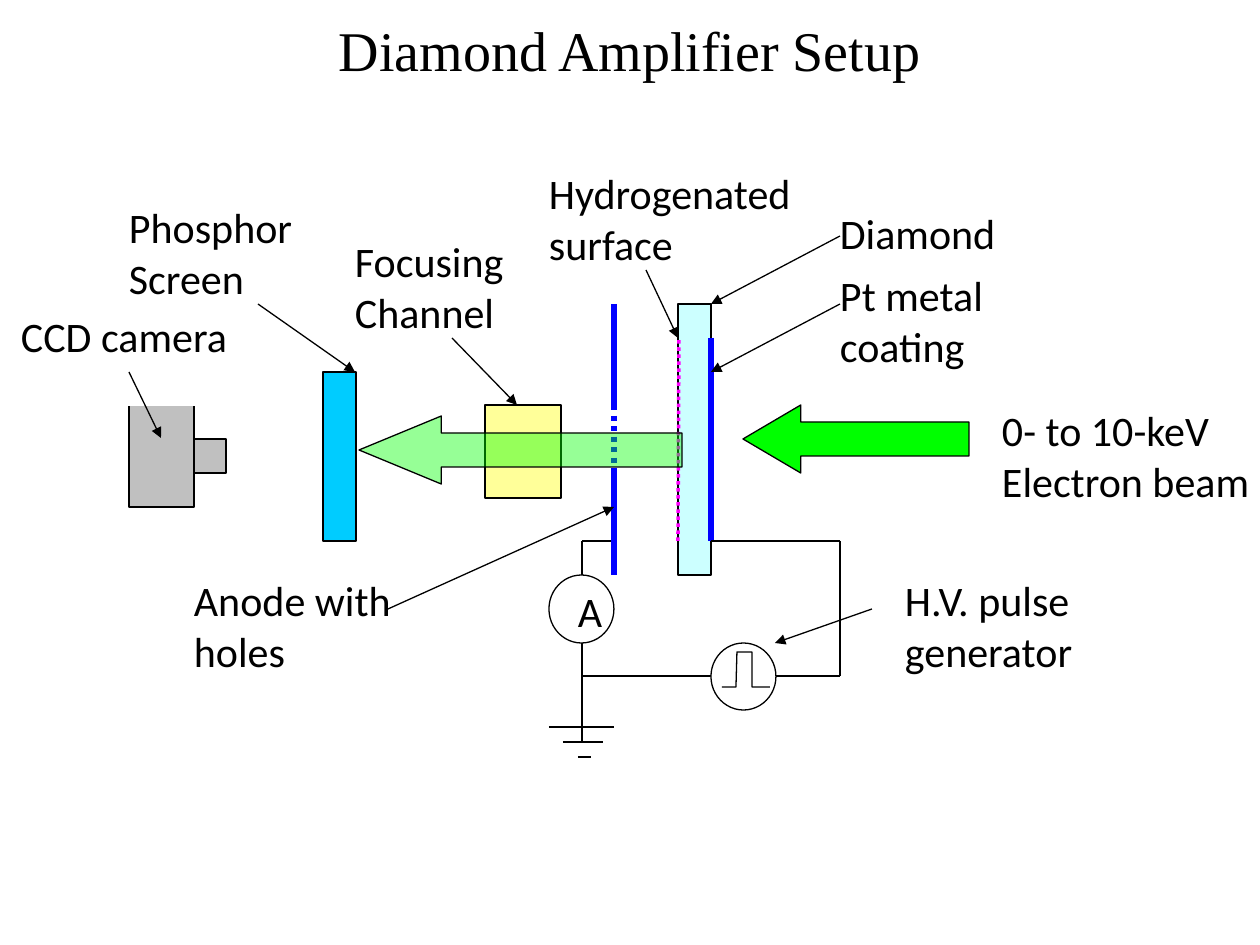
import pptx
import pptx.util
import pptx.dml.color
import pptx.enum.dml
import pptx.enum.shapes
import pptx.enum.text
import pptx.oxml
import pptx.oxml.ns
from dataclasses import dataclass

PX = 914400 / 126
SHAPE = pptx.enum.shapes.MSO_SHAPE
DOTS = pptx.enum.dml.MSO_LINE.ROUND_DOT  # sysDot


@dataclass(frozen=True)
class Theme:
    ink: str = "000000"
    paper: str = "FFFFFF"
    diamond: str = "CCFFFF"
    metal: str = "0000FF"
    hydrogen: str = "FF00FF"
    beam: str = "00FF00"
    lens: str = "FFFF99"
    phosphor: str = "00CCFF"
    camera: str = "C0C0C0"
    title_font: str = "Times New Roman"
    label_font: str = "Calibri"
    title_size: int = 32
    label_size: int = 24
    thin: float = 0.75
    dotted: int = 2
    thick: int = 3


T = Theme()


def px(*values):
    return [pptx.util.Emu(round(v * PX)) for v in values]


def rgb(color):
    return pptx.dml.color.RGBColor.from_string(color)


def append_xml(parent, tag, attrs=""):
    ns = pptx.oxml.ns.nsdecls("a")
    parent.append(pptx.oxml.parse_xml(f"<a:{tag} {ns} {attrs}/>"))


def write(shape, text, font=T.label_font, size=T.label_size, insets=(0, 0, 0, 0),
          align="LEFT", anchor="TOP"):
    tf = shape.text_frame
    tf.word_wrap = True
    tf.margin_left, tf.margin_top, tf.margin_right, tf.margin_bottom = px(*insets)
    tf.vertical_anchor = getattr(pptx.enum.text.MSO_ANCHOR, anchor)
    p = tf.paragraphs[0]
    p.alignment = getattr(pptx.enum.text.PP_ALIGN, align)
    r = p.add_run()
    r.text = text
    r.font.name, r.font.size = font, pptx.util.Pt(size)
    r.font.color.rgb = rgb(T.ink)


def add_part(s, kind, box, fill, outline=True, adjust=(), alpha=None):
    sp = s.shapes.add_shape(kind, *px(*box))
    sp.shadow.inherit = False
    sp.fill.solid()
    sp.fill.fore_color.rgb = rgb(fill)
    if alpha:
        color = sp._element.spPr.find(".//" + pptx.oxml.ns.qn("a:srgbClr"))
        append_xml(color, "alpha", f'val="{alpha * 1000}"')
    if outline:
        sp.line.color.rgb = rgb(T.ink)
        sp.line.width = pptx.util.Pt(T.thin)
    else:
        sp.line.fill.background()
    for i, value in enumerate(adjust):
        sp.adjustments[i] = value
    return sp


def add_line(s, start, end, color=T.ink, width=T.thin, dash=None, arrow=False):
    kind = pptx.enum.shapes.MSO_CONNECTOR.STRAIGHT
    line = s.shapes.add_connector(kind, *px(*start, *end))
    line.line.color.rgb = rgb(color)
    line.line.width = pptx.util.Pt(width)
    if dash:
        line.line.dash_style = dash
    if arrow:
        append_xml(line.line._get_or_add_ln(), "tailEnd", 'type="triangle"')
    append_xml(line._element.spPr, "effectLst")


def add_label(s, text, x, y, width=226, top=0, filled=False, pointer=None):
    box = (x, y, width, 101)
    if filled:
        sp = add_part(s, SHAPE.RECTANGLE, box, T.paper, outline=False)
    else:
        sp = s.shapes.add_textbox(*px(*box))
    write(sp, text, insets=(0, top, 0, 0))
    if pointer:
        add_line(s, *pointer, arrow=True)


def add_pulse(s):
    builder = s.shapes.build_freeform(722, 687, scale=PX)
    builder.add_line_segments(
        [(736, 687), (737, 652), (752, 652), (752, 687), (770, 687)], close=False)
    sp = builder.convert_to_shape()
    sp.shadow.inherit = False
    sp.fill.background()
    sp.line.color.rgb = rgb(T.ink)
    sp.line.width = pptx.util.Pt(T.thin)


def add_title(s, text):
    title = s.shapes.title
    title.left, title.top, title.width, title.height = px(63, 0, 1134, 98)
    write(title, text, T.title_font, T.title_size, (13, 6, 13, 6), "CENTER", "MIDDLE")


def add_circuit(s):
    for start, end in [
        ((614, 541), (582, 541)), ((711, 541), (840, 541)),  # electrode leads
        ((582, 541), (582, 743)), ((840, 541), (840, 676)),  # vertical wires
        ((582, 676), (711, 676)), ((840, 676), (775, 676)),  # generator wires
        ((549, 727), (614, 727)), ((563, 742), (603, 742)), ((578, 757), (591, 757)),
    ]:
        add_line(s, start, end)
    # Ammeter and pulse generator
    add_part(s, SHAPE.OVAL, (549, 575, 65, 68), T.paper)
    write(s.shapes.add_textbox(*px(569, 581, 130, 68)), "A", insets=(9, 4, 13, 6))
    add_part(s, SHAPE.OVAL, (711, 643, 65, 67), T.paper)
    add_pulse(s)


def main():
    prs = pptx.Presentation()
    prs.slide_width, prs.slide_height = px(1260, 945)
    s = prs.slides.add_slide(prs.slide_layouts[5])
    add_title(s, "Diamond Amplifier Setup")

    # Diamond and incoming beam
    add_part(s, SHAPE.RECTANGLE, (678, 304, 33, 271), T.diamond)
    add_line(s, (711, 338), (711, 541), T.metal, T.thick)
    add_part(s, SHAPE.LEFT_ARROW, (743, 405, 226, 68), T.beam, adjust=(0.5, 0.85))

    add_circuit(s)

    # Labels on the right, with their pointers
    add_label(s, "Hydrogenated surface", 549, 168, 258, filled=True,
              pointer=((646, 270), (678, 338)))
    add_label(s, "Diamond", 840, 202, top=6, filled=True,
              pointer=((840, 236), (711, 304)))
    add_label(s, "0- to 10-keV Electron beam", 1002, 405, 258, filled=True)

    # Hydrogenated face and perforated anode
    add_line(s, (678, 541), (679, 338), T.hydrogen, T.dotted, DOTS)
    for top, bottom, dash in [(304, 405, None), (405, 473, DOTS), (473, 575, None)]:
        add_line(s, (614, top), (614, bottom), T.metal, T.thick, dash)

    # Focusing channel, screen and camera body
    add_part(s, SHAPE.RECTANGLE, (485, 405, 76, 93), T.lens)
    add_part(s, SHAPE.RECTANGLE, (323, 372, 33, 169), T.phosphor)
    add_part(s, SHAPE.RECTANGLE, (129, 405, 65, 102), T.camera)

    # Remaining labels, with their pointers
    add_label(s, "CCD camera", 21, 305, top=6, filled=True,
              pointer=((129, 372), (161, 438)))
    add_label(s, "Phosphor Screen", 129, 202, filled=True,
              pointer=((258, 304), (355, 372)))
    add_label(s, "Focusing Channel", 355, 236, pointer=((452, 338), (517, 405)))
    add_label(s, "Pt metal coating", 840, 270, 258, pointer=((840, 304), (711, 372)))
    add_label(s, "Anode with holes", 194, 575, pointer=((388, 609), (614, 507)))
    add_label(s, "H.V. pulse generator", 905, 575, filled=True,
              pointer=((872, 609), (775, 643)))

    # Amplified beam and camera lens
    add_part(s, SHAPE.LEFT_ARROW, (359, 416, 323, 68), T.beam, adjust=(0.5, 1.21), alpha=41)
    add_part(s, SHAPE.RECTANGLE, (194, 439, 32, 34), T.camera)

    prs.save("out.pptx")


if __name__ == "__main__":
    main()
